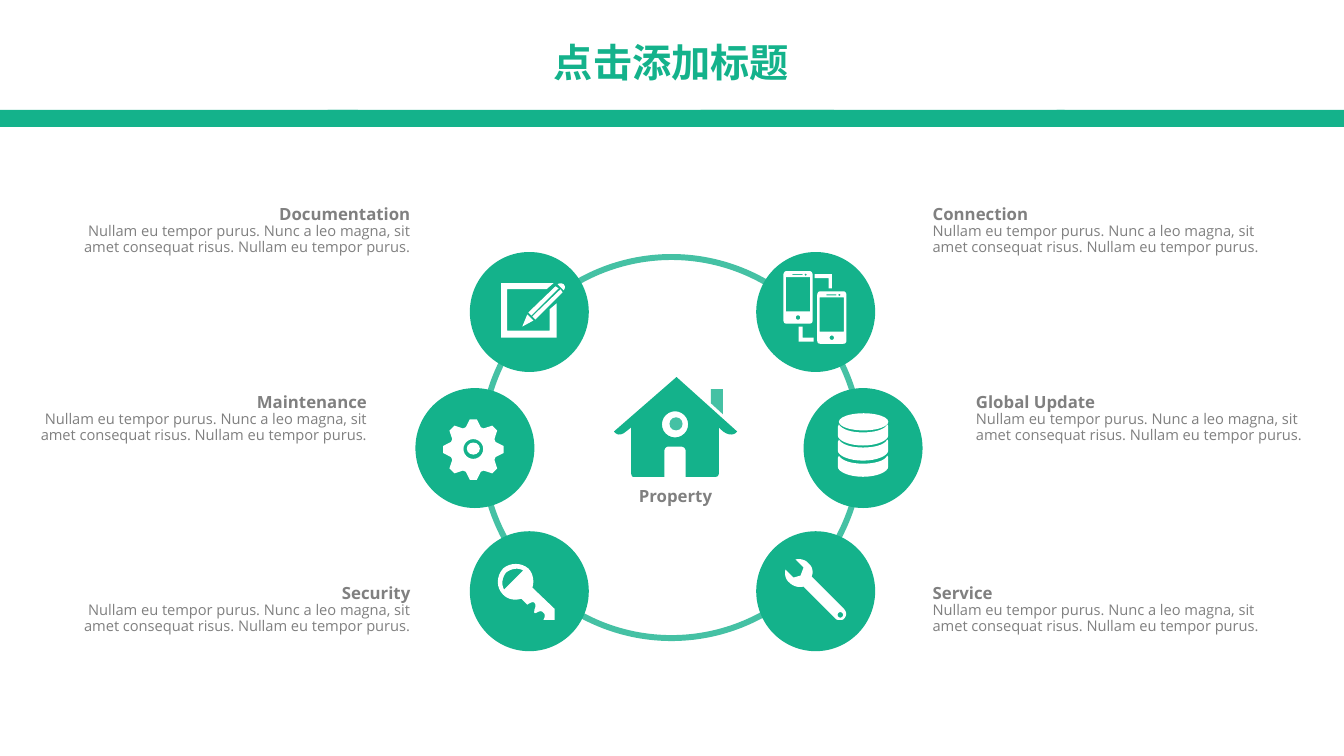
import math
from pptx import Presentation
from pptx import util as u
from pptx.dml.color import RGBColor
from pptx.enum import shapes, text
from pptx.oxml.ns import qn
from lxml import etree

PX = 9144  # EMU in one px, 100 px to the inch
COLORS = {"green": "14B28B", "light": "45C1A4", "gray": "808080", "white": "FFFFFF"}
LATIN, CHINESE = "Open Sans", "Noto Sans CJK SC"
BODY = ("Nullam eu tempor purus. Nunc a leo magna, sit amet consequat risus. "
        "Nullam eu tempor purus.")
CURVE_STEPS = 8
LEFT, CENTER, RIGHT = text.PP_ALIGN.LEFT, text.PP_ALIGN.CENTER, text.PP_ALIGN.RIGHT

# Circle left, circle top, text left, text top, alignment, heading
TOPICS = [
    (466, 250, 77, 201, RIGHT, "Documentation"),
    (412, 385, 34, 388, RIGHT, "Maintenance"),
    (466, 527, 77, 577, RIGHT, "Security"),
    (750, 250, 920, 201, LEFT, "Connection"),
    (797, 385, 963, 388, LEFT, "Global Update"),
    (750, 527, 920, 577, LEFT, "Service"),
]


def rgb(color):
    return RGBColor.from_string(COLORS[color])


def add_preset(slide, kind, left, top, width, height, color):
    shape = slide.shapes.add_shape(kind, left * PX, top * PX, width * PX, height * PX)
    shape.shadow.inherit = False
    shape.fill.solid()
    shape.fill.fore_color.rgb = rgb(color)
    shape.line.fill.background()
    return shape


def add_oval(slide, left, top, width, height, color):
    return add_preset(slide, shapes.MSO_SHAPE.OVAL, left, top, width, height, color)


def add_text(slide, left, top, width, height, lines, sizes, color, font, align,
             inset=(5, 3), grow=True):
    """Text box with a bold first line and regular lines after it."""
    box = slide.shapes.add_textbox(left * PX, top * PX, width * PX, height * PX)
    frame = box.text_frame
    frame.word_wrap = True
    frame.auto_size = (text.MSO_AUTO_SIZE.SHAPE_TO_FIT_TEXT if grow
                       else text.MSO_AUTO_SIZE.NONE)
    frame.margin_left = frame.margin_right = inset[0] * PX
    frame.margin_top = frame.margin_bottom = inset[1] * PX
    frame.text = "\n".join(lines)
    for index, (paragraph, size) in enumerate(zip(frame.paragraphs, sizes)):
        paragraph.alignment = align
        paragraph.line_spacing = 0.9
        for run in paragraph.runs:
            run.font.size = u.Pt(size)
            run.font.bold = index == 0
            run.font.name = font
            run.font.color.rgb = rgb(color)
            east_asian = etree.SubElement(run._r.get_or_add_rPr(), qn("a:ea"))
            east_asian.set("typeface", font)


def flatten(contour):
    """Turn (x, y) corners and six-number cubic curves into plain points."""
    points = []
    for part in contour:
        if len(part) == 2:
            points.append(part)
            continue
        controls = [points[-1], part[:2], part[2:4], part[4:]]
        for step in range(1, CURVE_STEPS + 1):
            t = step / CURVE_STEPS
            weights = ((1 - t) ** 3, 3 * t * (1 - t) ** 2, 3 * t * t * (1 - t), t ** 3)
            points.append(tuple(sum(w * c[axis] for w, c in zip(weights, controls))
                                for axis in (0, 1)))
    return points


def add_outline(slide, color, *contours, left=0, top=0):
    """Filled freeform; contours after the first are holes."""
    builder = None
    for contour in contours:
        points = [((left + x) * PX, (top + y) * PX) for x, y in flatten(contour)]
        if builder is None:
            builder = slide.shapes.build_freeform(*points[0], scale=1.0)
        else:
            builder.move_to(*points[0])
        builder.add_line_segments(points[1:], close=True)
    shape = builder.convert_to_shape()
    shape.shadow.inherit = False
    shape.fill.solid()
    shape.fill.fore_color.rgb = rgb(color)
    shape.line.fill.background()


def polar(x, y, radius, degrees):
    angle = math.radians(degrees)
    return x + radius * math.sin(angle), y - radius * math.cos(angle)


def ring_hole(x, y, radius):
    return [polar(x, y, radius, -degrees) for degrees in range(0, 360, 15)]


def box_contour(left, top, right, bottom):
    return [(left, top), (right, top), (right, bottom), (left, bottom)]


def draw_house(slide):
    house = [(671, 374), (609, 428), (609, 428, 613, 435, 621, 428), (626, 424),
             (626, 469), (626, 469, 626, 473, 628, 473), (659, 473), (659, 447),
             (659, 447, 659, 443, 663, 443), (675, 443),
             (680, 443, 680, 447, 680, 447), (680, 473), (710, 473),
             (713, 473, 713, 469, 713, 469), (713, 424), (717, 428),
             (727, 435, 731, 428, 731, 428)]
    add_outline(slide, "green", house, ring_hole(669.5, 421, 13))
    add_outline(slide, "light", [(717, 411), (717, 386), (705, 386), (705, 400)])
    add_oval(slide, 664, 414, 13, 13, "light")


def draw_notepad(slide):
    add_outline(slide, "white", [(529, 318), (523, 312), (518, 324)])
    add_outline(slide, "white", [(551, 284), (524, 310), (527, 313), (554, 286)])
    add_outline(slide, "white", [(528, 314), (531, 317), (558, 290), (556, 287)])
    add_outline(slide, "white", [(559, 282), (556, 280, 553, 282, 553, 282),
                                 (559, 288), (559, 288, 562, 285, 559, 282)])
    add_outline(slide, "white", [(545, 328), (503, 328), (503, 287), (542, 287),
                                 (549, 281), (497, 281), (497, 335), (552, 335),
                                 (552, 301), (545, 307)])


def draw_gear(slide):
    x, y = 469.5, 446
    tooth = [(30.2, -6.6), (30.2, 6.6), (23.3, 18.8), (23.3, 26.2)]
    gear = [polar(x, y, radius, turn + degrees)
            for turn in range(0, 360, 45) for radius, degrees in tooth]
    add_outline(slide, "white", gear, ring_hole(x, y - 0.5, 9.8))
    add_oval(slide, 463, 439, 13, 12, "white")


def draw_database(slide):
    layer = [(25, 8), (13, 8, 4, 5, 1, 0), (1, 1, 0, 2, 0, 3), (0, 11),
             (0, 16, 11, 21, 25, 21), (39, 21, 50, 16, 50, 11), (50, 3),
             (50, 2, 50, 1, 49, 0), (47, 5, 37, 8, 25, 8)]
    for top in (421, 436, 452):
        add_outline(slide, "white", layer, left=831, top=top)
    add_oval(slide, 832, 410, 49, 17, "white")


def draw_key(slide):
    key = [(499, 564), (492, 572, 492, 583, 499, 590), (504, 595, 511, 596, 517, 594),
           (523, 600), (523, 600, 528, 596, 530, 598), (532, 600, 531, 603, 530, 605),
           (530, 607, 529, 609, 532, 608), (534, 607, 537, 605, 539, 608),
           (542, 610, 539, 615, 539, 615), (550, 615), (550, 604), (528, 583),
           (530, 577, 529, 569, 524, 564), (517, 558, 506, 558, 499, 564)]
    bow = [(500, 585), (497, 580, 498, 573, 502, 568), (507, 564, 514, 563, 519, 566)]
    add_outline(slide, "white", key, bow)


def draw_wrench(slide):
    wrench = [(805, 572), (807, 568, 806, 562, 802, 559), (799, 555, 793, 554, 789, 555),
              (797, 563), (794, 571), (787, 573), (779, 565),
              (778, 570, 779, 575, 783, 578), (787, 582, 792, 583, 797, 582),
              (829, 614), (830, 615, 831, 615, 833, 615), (835, 615, 836, 615, 837, 614),
              (840, 611, 840, 607, 837, 604)]
    add_outline(slide, "white", wrench, ring_hole(833.5, 610, 2.7))


def draw_phones(slide):
    body = [(29, 48), (29, 4), (29, 2, 28, 0, 26, 0), (3, 0), (1, 0, 0, 2, 0, 4),
            (0, 48), (0, 51, 1, 52, 3, 52), (26, 52), (28, 52, 29, 51, 29, 48)]
    speaker, screen = box_contour(9, 3, 19, 4), box_contour(2.5, 6, 26.5, 40)
    for left, top in ((777, 269), (810.5, 289)):
        add_outline(slide, "white", body, speaker, screen, ring_hole(22, 3.5, 1),
                    ring_hole(14.5, 46, 2.2), left=left, top=top)
    add_outline(slide, "white", [(822, 286), (825, 286), (825, 272), (808, 272),
                                 (808, 276), (822, 276)])
    add_outline(slide, "white", [(796, 324), (792, 324), (792, 339), (807, 339),
                                 (807, 335), (796, 335)])


def main():
    presentation = Presentation()
    presentation.slide_width, presentation.slide_height = u.Inches(13.33), u.Inches(7.5)
    slide = presentation.slides.add_slide(presentation.slide_layouts[6])

    # Title and the band beneath it
    for left, width in ((-1, 356), (325, 502), (695, 361), (1048, 287)):
        add_preset(slide, shapes.MSO_SHAPE.RECTANGLE, left, 109, width, 17, "green")
    add_text(slide, 278, 38, 776, 87, ["点击添加标题"], [28], "green", CHINESE, CENTER,
             inset=(10, 5), grow=False)

    # Ring with six topics
    ring = add_oval(slide, 478, 255, 376, 378, "light")
    ring.fill.background()
    ring.line.color.rgb = rgb("light")
    ring.line.width = u.Pt(4.25)
    for circle_left, circle_top, text_left, text_top, align, heading in TOPICS:
        add_oval(slide, circle_left, circle_top, 118, 119, "green")
        add_text(slide, text_left, text_top, 335, 61, [heading, BODY], [12, 10.5],
                 "gray", LATIN, align)

    # Icons
    for draw in (draw_house, draw_notepad, draw_gear, draw_database, draw_key,
                 draw_wrench, draw_phones):
        draw(slide)
    add_text(slide, 579, 481, 182, 25, ["Property"], [12], "gray", LATIN, CENTER)

    presentation.save("out.pptx")


if __name__ == "__main__":
    main()
